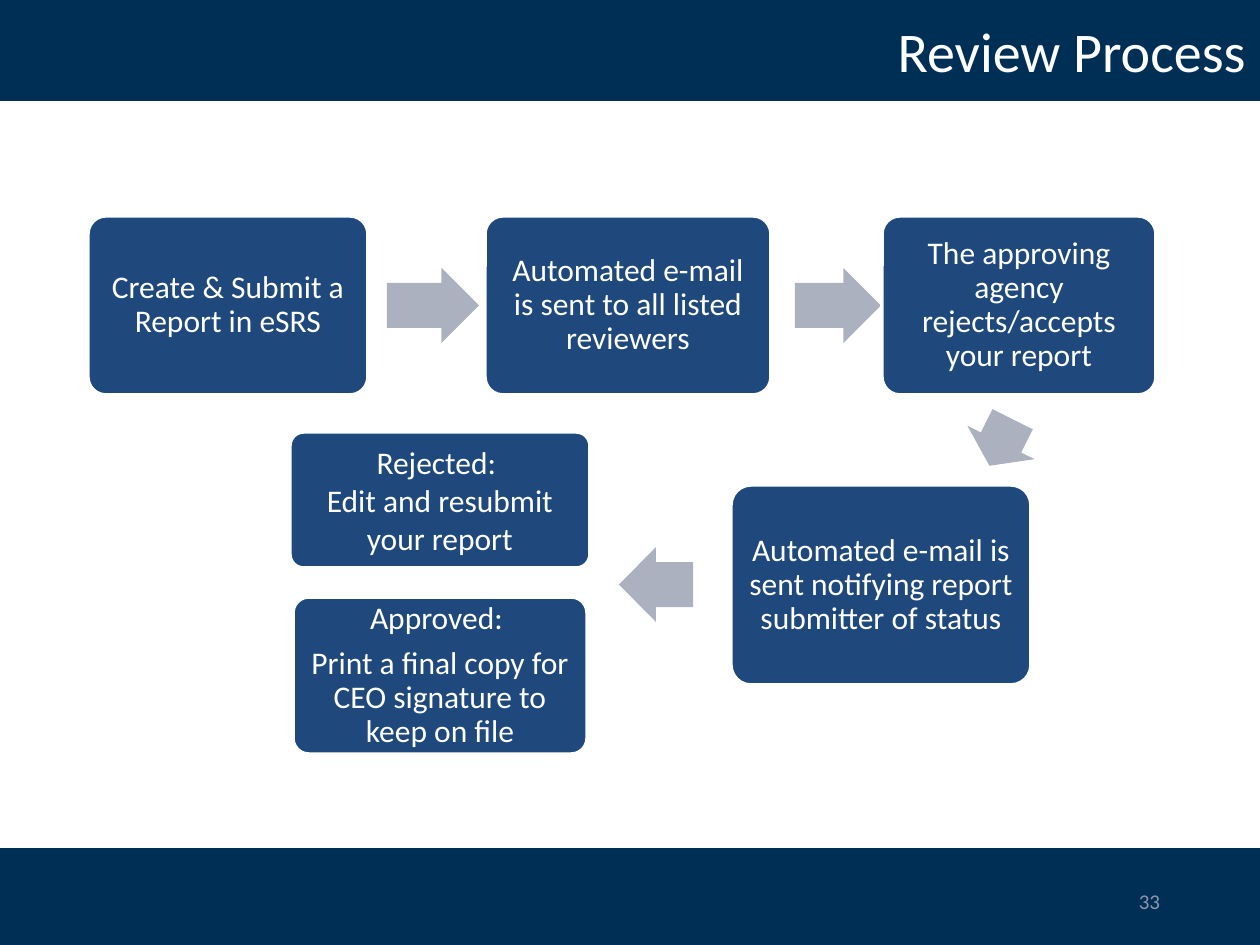
from pptx import Presentation
from pptx.dml.color import RGBColor
from pptx.enum.shapes import MSO_SHAPE as Kind
from pptx.enum.text import MSO_ANCHOR as Anchor, PP_ALIGN as Align
from pptx.util import Pt

SCALE = 914400 / 126
COLORS = {
    "navy": "002F56",
    "blue": "1F497D",
    "arrow": "ACB1BF",
    "number": "8D95AA",
    "white": "FFFFFF",
}


def px(*vals):
    """Turn px lengths into EMU."""
    return [round(val * SCALE) for val in vals]


def rgb(name):
    """Look up a named colour."""
    return RGBColor.from_string(COLORS[name])


def write(shape, *lines, size=18, color="white", align=Align.CENTER,
          space=None, after=0, pad=(13, 6)):
    """Fill a shape with formatted paragraphs."""
    frame = shape.text_frame
    frame.word_wrap = True
    frame.vertical_anchor = Anchor.MIDDLE
    frame.margin_left = frame.margin_right = px(pad[0])[0]
    frame.margin_top = frame.margin_bottom = px(pad[1])[0]
    for i, line in enumerate(lines):
        para = frame.add_paragraph() if i else frame.paragraphs[0]
        para.text = line
        para.alignment = align
        para.line_spacing = space
        para.space_before = Pt(0)
        para.space_after = Pt(after)
        para.font.name = "Calibri"
        para.font.size = Pt(size)
        para.font.color.rgb = rgb(color)


def draw(slide, kind, at, fill, *adjust):
    """Add a flat preset shape."""
    shape = slide.shapes.add_shape(kind, *px(*at))
    shape.shadow.inherit = False
    shape.fill.solid()
    shape.fill.fore_color.rgb = rgb(fill)
    shape.line.fill.background()
    for i, val in enumerate(adjust):
        shape.adjustments[i] = val
    return shape


def band(slide, top, height):
    """Add a full-width band behind everything else."""
    shape = draw(slide, Kind.RECTANGLE, (0, top, 1260, height), "navy")
    slide.shapes._spTree.insert(2, shape._element)


def step(slide, at, *lines, **style):
    """Add a rounded box that holds one step."""
    box = draw(slide, Kind.ROUNDED_RECTANGLE, at, "blue", 0.1)
    box.line.color.rgb = rgb("white")
    box.line.width = Pt(2)
    write(box, *lines, **{"space": 0.9, "after": 6.3, "pad": (9, 9), **style})


def arrow(slide, at, turn=0):
    """Add a block arrow between steps."""
    draw(slide, Kind.RIGHT_ARROW, at, "arrow", 0.6, 0.5).rotation = turn


def main():
    """Build the slide and save it."""
    deck = Presentation()
    deck.slide_width, deck.slide_height = px(1260, 945)
    slide = deck.slides.add_slide(deck.slide_layouts[5])
    band(slide, 848, 97)
    band(slide, 0, 101)

    title = slide.shapes.title
    title.left, title.top, title.width, title.height = px(325, 6, 934, 97)
    write(title, "Review Process", size=32, align=Align.RIGHT,
          space=0.9, after=12)
    number = slide.shapes.add_textbox(*px(890, 876, 283, 50))
    write(number, "33", size=12, color="number", align=Align.RIGHT)

    step(slide, (88, 216, 280, 179), "Create & Submit a Report in eSRS")
    arrow(slide, (387, 268, 92, 75))
    step(slide, (485, 216, 286, 179),
         "Automated e-mail is sent to all listed reviewers")
    arrow(slide, (795, 268, 86, 75))
    step(slide, (882, 216, 274, 179),
         "The approving agency rejects/accepts your report")
    arrow(slide, (975, 405, 52, 75), 116.4)
    step(slide, (731, 485, 300, 200),
         "Automated e-mail is sent notifying report submitter of status")
    arrow(slide, (619, 547, 74, 75), 180)
    step(slide, (290, 432, 300, 136),
         "Rejected: ", "Edit and resubmit your report",
         space=1.0, after=0, pad=(19, 19))
    step(slide, (293, 597, 294, 157),
         "Approved: ", "Print a final copy for CEO signature to keep on file")
    deck.save("out.pptx")


if __name__ == "__main__":
    main()
